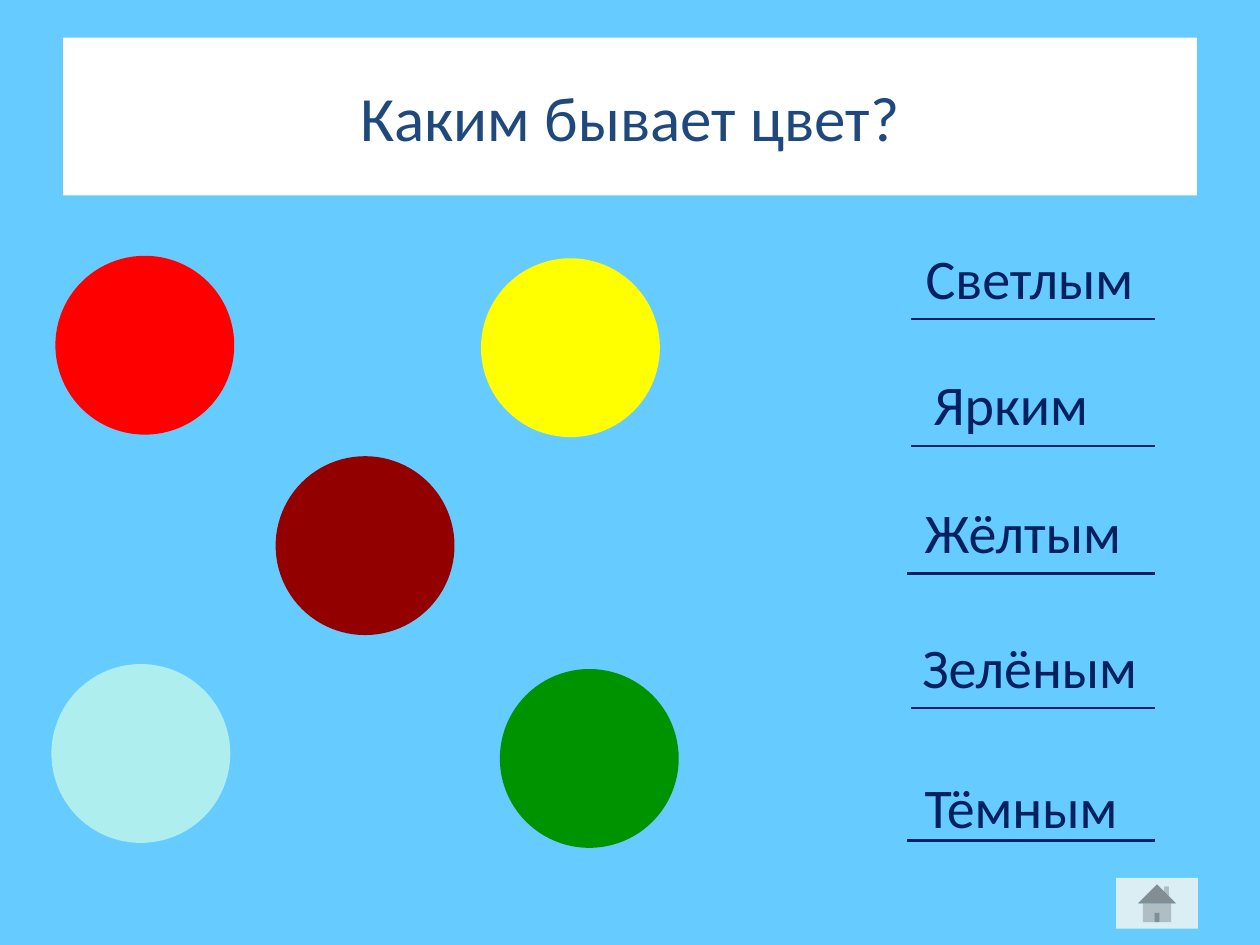
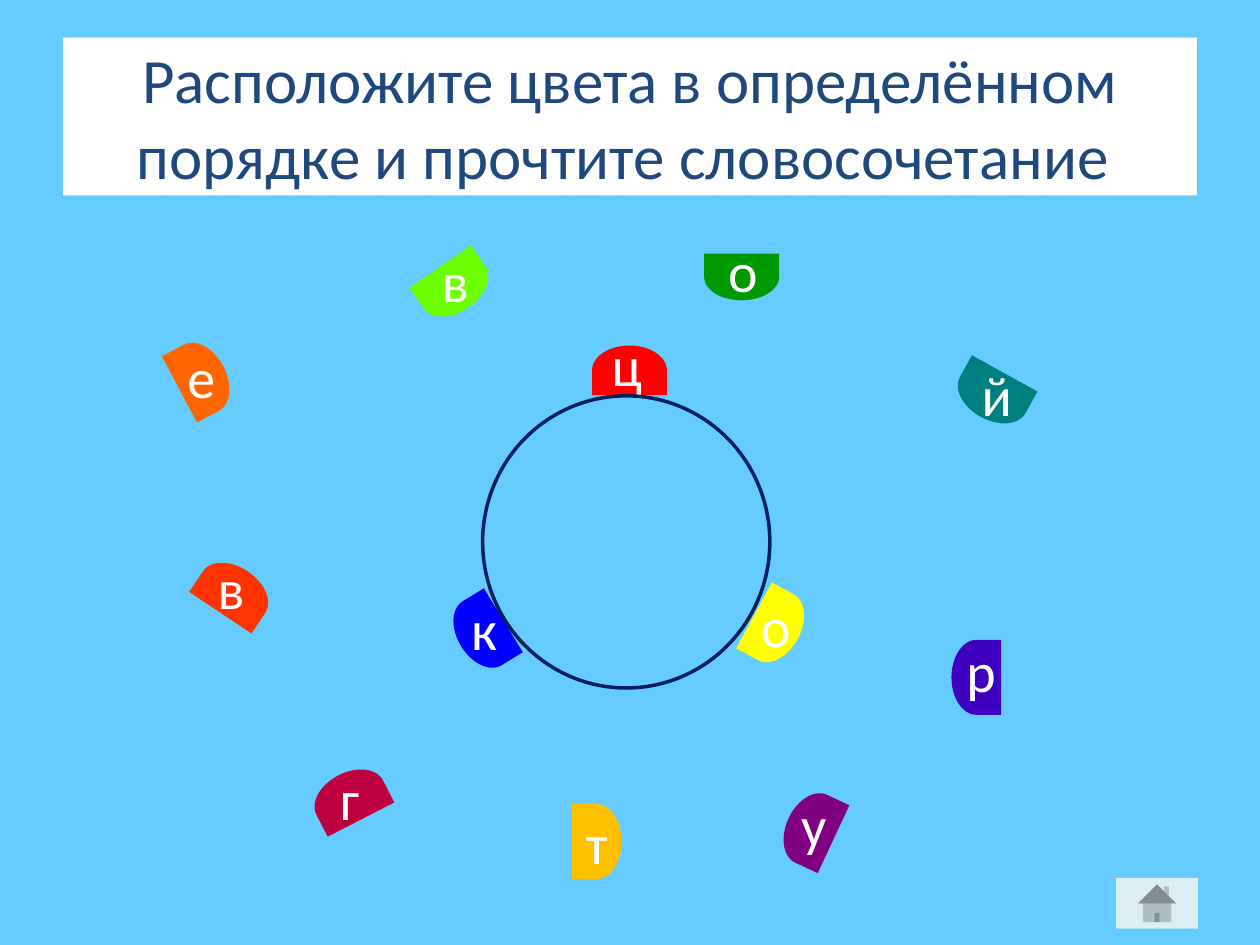
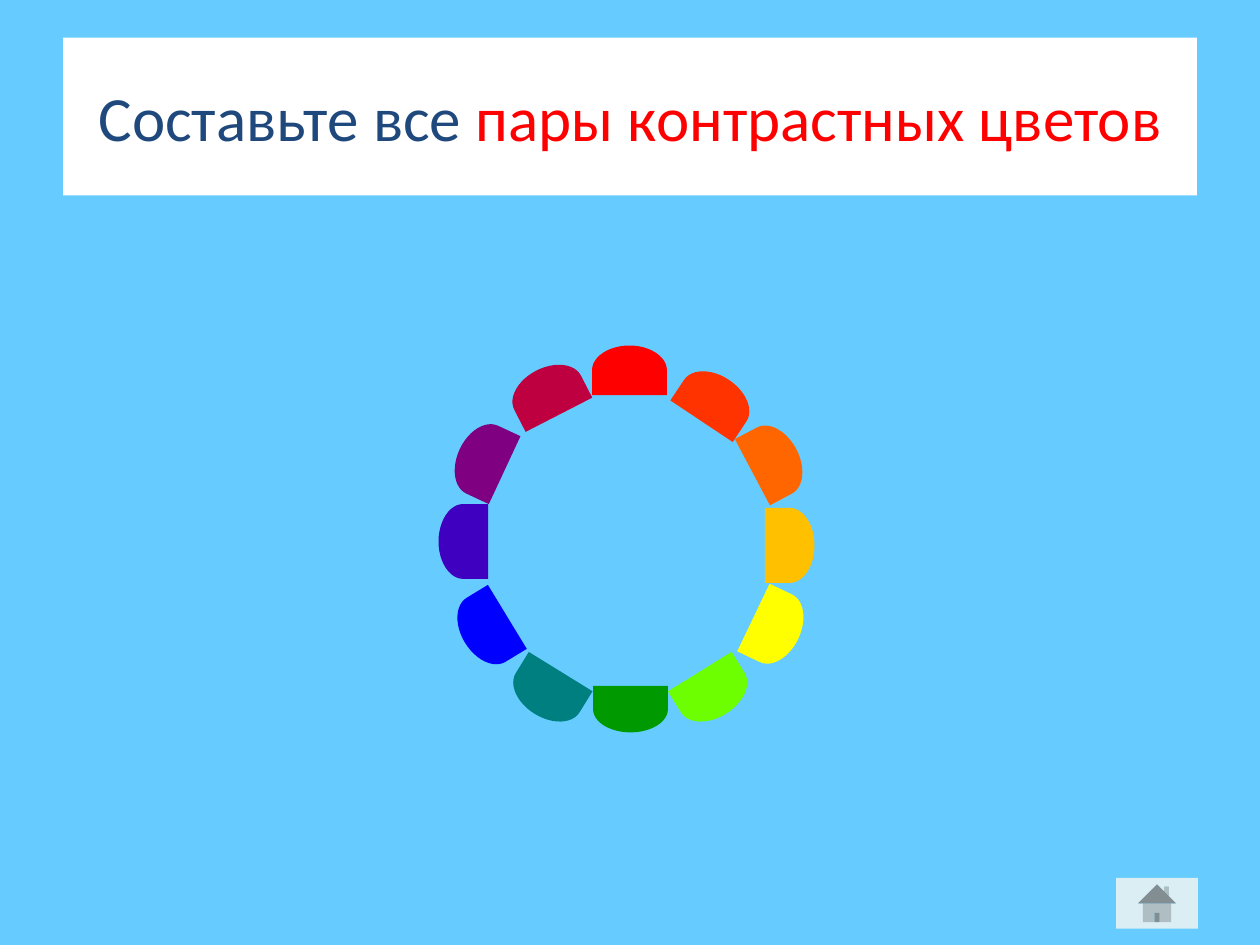
from lxml.etree import SubElement
from pptx import Presentation
from pptx.dml.color import RGBColor
from pptx.enum.shapes import MSO_CONNECTOR as Connector, MSO_SHAPE as Shape
from pptx.enum.text import MSO_ANCHOR as Anchor, MSO_AUTO_SIZE as AutoSize, PP_ALIGN as Align
from pptx.oxml.ns import qn
from pptx.util import Cm, Pt

FONT = "Calibri"
SKY = RGBColor(0x66, 0xCC, 0xFF)
WHITE = RGBColor(0xFF, 0xFF, 0xFF)
BUTTON = RGBColor(0xDB, 0xEE, 0xF4)
TITLE_BLUE = RGBColor(0x1F, 0x49, 0x7D)
NAVY = RGBColor(0x00, 0x20, 0x60)
PALE = RGBColor(0xAF, 0xEE, 0xEE)
DARK_GREEN = RGBColor(0x00, 0x93, 0x00)
DARK_RED = RGBColor(0x93, 0x00, 0x00)
RED = RGBColor(0xFF, 0x00, 0x00)
VERMILION = RGBColor(0xFF, 0x33, 0x00)
ORANGE = RGBColor(0xFF, 0x66, 0x00)
AMBER = RGBColor(0xFF, 0xC0, 0x00)
YELLOW = RGBColor(0xFF, 0xFF, 0x00)
LIME = RGBColor(0x6D, 0xFE, 0x00)
GREEN = RGBColor(0x00, 0x99, 0x00)
TEAL = RGBColor(0x00, 0x7F, 0x80)
BLUE = RGBColor(0x00, 0x00, 0xFF)
VIOLET = RGBColor(0x40, 0x00, 0xBF)
PURPLE = RGBColor(0x7F, 0x00, 0x80)
CRIMSON = RGBColor(0xBF, 0x00, 0x40)

PETAL_DEPTH, PETAL_WIDTH = 1.0, 1.51
CIRCLE_SIZE = 3.5
RULE_END = 5.0

# colour, left, top
CIRCLES = [
    (PALE, 0, 8.23),
    (RED, 0.08, 0),
    (YELLOW, 8.66, 0.05),
    (DARK_GREEN, 9.04, 8.33),
    (DARK_RED, 4.52, 4.04),
]
# word, left, top, rule left, rule top
WORDS = [
    ("Светлым", 0.07, 0, 0.07, 1.68),
    ("Ярким", 0.23, 2.54, 0.07, 4.24),
    ("Жёлтым", 0.05, 5.13, 0, 6.81),
    ("Зелёным", 0, 7.85, 0.07, 9.52),
    ("Тёмным", 0.05, 10.67, 0, 12.19),
]
# colour, left, top, rotation, letter, letter shift right, letter shift down
LETTERED_PETALS = [
    (RED, 8.69, 1.91, 270, "ц", -0.11, -0.18),
    (YELLOW, 11.64, 7.09, 28.5, "о", -0.05, -0.1),
    (CRIMSON, 3.05, 10.52, 242.8, "г", 0.05, -0.03),
    (PURPLE, 12.35, 11.15, 205, "у", 0.05, -0.15),
    (VIOLET, 15.68, 8.1, 180, "р", 0.05, -0.2),
    (TEAL, 16.01, 2.41, 118.9, "й", 0.03, -0.08),
    (GREEN, 10.98, 0.03, 90, "о", -0.05, -0.2),
    (LIME, 5.16, 0.23, 55.2, "в", 0, -0.2),
    (AMBER, 8.03, 11.41, 0, "т", 0.03, -0.05),
    (ORANGE, 0.06, 2.06, 332.1, "е", -0.03, -0.08),
    (VERMILION, 0.72, 6.38, 303.7, "в", -0.08, -0.15),
    (BLUE, 5.72, 7.21, 148.7, "к", 0.03, -0.15),
]
# colour, left, top, rotation
WHEEL_PETALS = [
    (RED, 3.39, 0.01, 270),
    (YELLOW, 6.34, 5.21, 25.6),
    (GREEN, 3.44, 6.84, 90),
    (LIME, 5.07, 6.51, 58.2),
    (AMBER, 6.62, 3.54, 0),
    (ORANGE, 6.31, 1.83, 332.1),
    (VERMILION, 5.12, 0.62, 303.7),
    (TEAL, 1.74, 6.51, 121.7),
    (BLUE, 0.5, 5.24, 148.7),
    (VIOLET, 0.04, 3.46, 180),
    (PURPLE, 0.42, 1.81, 205),
    (CRIMSON, 1.74, 0.46, 242.8),
]


def add_run(paragraph, text, size, color):
    run = paragraph.add_run()
    run.text = text
    run.font.name = FONT
    run.font.size = Pt(size)
    run.font.color.rgb = color


def add_figure(shapes, kind, left, top, width, height, fill=None, outline=None, weight=0):
    figure = shapes.add_shape(kind, Cm(left), Cm(top), Cm(width), Cm(height))
    figure.shadow.inherit = False
    if fill is None:
        figure.fill.background()
    else:
        figure.fill.solid()
        figure.fill.fore_color.rgb = fill
    if outline is None:
        figure.line.fill.background()
    else:
        figure.line.color.rgb = outline
        figure.line.width = Pt(weight)
    return figure


def add_label(shapes, text, left, top, width, height, color, margins=(0.25, 0.13)):
    label = shapes.add_textbox(Cm(left), Cm(top), Cm(width), Cm(height))
    frame = label.text_frame
    frame.word_wrap = True
    frame.auto_size = AutoSize.SHAPE_TO_FIT_TEXT
    frame.margin_left = frame.margin_right = Cm(margins[0])
    frame.margin_top = frame.margin_bottom = Cm(margins[1])
    add_run(frame.paragraphs[0], text, 32, color)
    return label


def add_petal(shapes, color, left, top, rotation):
    depth = 0.94 if color == GREEN else PETAL_DEPTH
    petal = add_figure(shapes, Shape.FLOWCHART_DELAY, left, top, depth, PETAL_WIDTH, color)
    petal.rotation = rotation


def add_titled_slide(deck, *title_parts):
    """Add a slide whose white title band holds (text, colour) runs."""
    slide = deck.slides.add_slide(deck.slide_layouts[5])
    title = slide.shapes.title
    title.left, title.top, title.width, title.height = Cm(1.27), Cm(0.76), Cm(22.86), Cm(3.18)
    title.fill.solid()
    title.fill.fore_color.rgb = WHITE
    frame = title.text_frame
    frame.word_wrap = True
    frame.auto_size = AutoSize.NONE
    frame.vertical_anchor = Anchor.MIDDLE
    heading = frame.paragraphs[0]
    heading.alignment = Align.CENTER
    for text, color in title_parts:
        add_run(heading, text, 36, color)
    return slide


def style_master(deck, slide):
    """Give the master its background and a home button, drawn first on a slide."""
    master = deck.slide_master
    master.background.fill.solid()
    master.background.fill.fore_color.rgb = SKY
    home = add_figure(slide.shapes, Shape.ACTION_BUTTON_HOME, 22.5, 17.7, 1.65, 1.02, BUTTON)
    home.element.nvSpPr.cNvPr.set("id", "100")
    master.shapes.element.append(home.element)


def draw_circles(slide, left, top):
    for color, x, y in CIRCLES:
        add_figure(slide.shapes, Shape.OVAL, left + x, top + y, CIRCLE_SIZE, CIRCLE_SIZE,
                   color, color, 3)


def draw_words(slide, left, top):
    for word, x, y, rule_x, rule_y in WORDS:
        add_label(slide.shapes, word, left + x, top + y, 7.1 - x, 1.68, NAVY, (0.3, 0.15))
        rule = slide.shapes.add_connector(
            Connector.STRAIGHT, Cm(left + rule_x), Cm(top + rule_y),
            Cm(left + RULE_END), Cm(top + rule_y))
        rule.line.color.rgb = NAVY
        rule.line.width = Pt(1.5)
        SubElement(rule.element.spPr, qn("a:effectLst"))


def draw_scattered_petals(slide, left, top):
    for color, x, y, rotation, letter, shift_x, shift_y in LETTERED_PETALS:
        pair = slide.shapes.add_group_shape().shapes
        add_petal(pair, color, left + x, top + y, rotation)
        add_label(pair, letter, left + x + shift_x, top + y + shift_y, 1.32, 1.62, WHITE)
    add_figure(slide.shapes, Shape.OVAL, left + 6.23, top + 3.18, 5.79, 5.89,
               outline=NAVY, weight=2)


def draw_colour_wheel(slide, left, top):
    for color, x, y, rotation in WHEEL_PETALS:
        add_petal(slide.shapes, color, left + x, top + y, rotation)


def main():
    deck = Presentation()
    deck.slide_width, deck.slide_height = Cm(25.4), Cm(19.05)

    kinds = add_titled_slide(deck, ("Каким бывает цвет?", TITLE_BLUE))
    style_master(deck, kinds)
    draw_circles(kinds, 1.09, 5.21)
    draw_words(kinds, 18.29, 4.75)

    puzzle = add_titled_slide(
        deck, ("Расположите цвета в определённом порядке и прочтите словосочетание ", TITLE_BLUE))
    draw_scattered_petals(puzzle, 3.5, 4.8)

    contrasts = add_titled_slide(
        deck, ("Составьте все ", TITLE_BLUE), ("пары контрастных цветов", RED))
    draw_colour_wheel(contrasts, 8.8, 6.7)

    deck.save("out.pptx")


if __name__ == "__main__":
    main()
